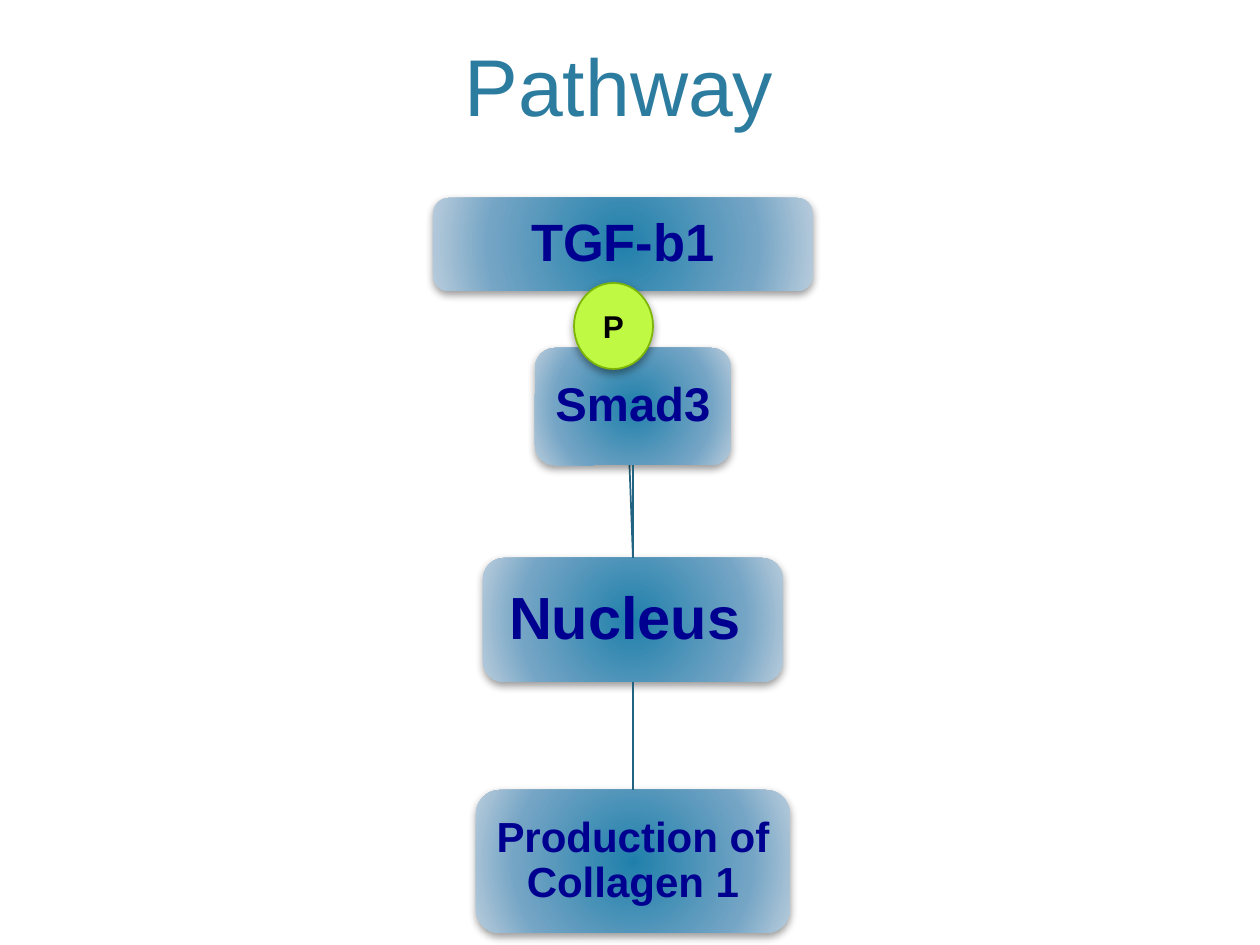
from dataclasses import dataclass

from lxml.etree import SubElement
from pptx import Presentation
from pptx.dml.color import RGBColor
from pptx.enum.shapes import MSO_CONNECTOR as Line, MSO_SHAPE as Shape
from pptx.enum.text import MSO_ANCHOR as Anchor, PP_ALIGN as Align
from pptx.oxml import parse_xml
from pptx.oxml.ns import nsdecls, qn
from pptx.util import Emu, Pt

PX = 914400 / 126
BOTTOM, TOP = 2, 0


@dataclass(frozen=True)
class Theme:
    font: str = "Arial"
    title: str = "2C7C9F"
    step_text: str = "000090"
    step_stops: tuple = ((0, "2080AB"), (69, "75A5C5"), (100, "B8CCDC"))
    link: str = "23637F"
    badge: str = "BFF944"
    badge_edge: str = "7EB606"
    badge_text: str = "000000"
    shadow: str = "000000"
    title_size: int = 46
    badge_size: int = 18


THEME = Theme()


def px(length):
    return Emu(round(length * PX))


def rgb(code):
    return RGBColor.from_string(code)


def write(frame, words, size, color, bold=True, anchor=Anchor.MIDDLE):
    frame.word_wrap = True
    frame.vertical_anchor = anchor
    paragraph = frame.paragraphs[0]
    paragraph.alignment = Align.CENTER
    run = paragraph.add_run()
    run.text = words
    font = run.font
    font.name, font.size, font.bold = THEME.font, Pt(size), bold
    font.color.rgb = rgb(color)
    return paragraph


def drop_shadow(shape):
    shape.shadow.inherit = False
    effects = shape._element.spPr.find(qn("a:effectLst"))
    outer = SubElement(effects, qn("a:outerShdw"), blurRad=str(Pt(5)),
                       dist=str(Pt(2)), dir="5400000", rotWithShape="0")
    black = SubElement(outer, qn("a:srgbClr"), val=THEME.shadow)
    SubElement(black, qn("a:alpha"), val="40000")


def radial_fill(shape):
    stops = "".join(
        f'<a:gs pos="{pos * 1000}"><a:srgbClr val="{color}"/></a:gs>'
        for pos, color in THEME.step_stops)
    gradient = parse_xml(
        f'<a:gradFill {nsdecls("a")} rotWithShape="1"><a:gsLst>{stops}</a:gsLst>'
        '<a:path path="circle"><a:fillToRect l="100000" t="100000" '
        'r="100000" b="100000"/></a:path></a:gradFill>')
    shape._element.spPr.find(qn("a:prstGeom")).addnext(gradient)


def add_step(slide, center, top, width, height, words, size, inset):
    step = slide.shapes.add_shape(Shape.ROUNDED_RECTANGLE, px(center - width / 2),
                                  px(top), px(width), px(height))
    radial_fill(step)
    step.line.fill.background()
    drop_shadow(step)
    frame = step.text_frame
    frame.margin_left = frame.margin_right = px(inset)
    frame.margin_top = frame.margin_bottom = px(inset)
    write(frame, words, size, THEME.step_text).line_spacing = 0.9
    return step


def add_link(slide, upper, lower):
    link = slide.shapes.add_connector(Line.STRAIGHT, 0, 0, 0, 0)
    link.begin_connect(upper, BOTTOM)
    link.end_connect(lower, TOP)
    link.line.color.rgb = rgb(THEME.link)
    link.line.width = Pt(1)
    SubElement(link._element.spPr, qn("a:effectLst"))


def add_badge(slide, left, top, width, height, words):
    badge = slide.shapes.add_shape(Shape.OVAL, px(left), px(top), px(width), px(height))
    badge.fill.solid()
    badge.fill.fore_color.rgb = rgb(THEME.badge)
    badge.line.color.rgb = rgb(THEME.badge_edge)
    badge.line.width = Pt(1)
    drop_shadow(badge)
    write(badge.text_frame, words, THEME.badge_size, THEME.badge_text)


def add_title(slide, left, top, width, height):
    title = slide.shapes.title
    title.left, title.top, title.width, title.height = map(px, (left, top, width, height))
    write(title.text_frame, "Pathway ", THEME.title_size, THEME.title,
          bold=False, anchor=Anchor.BOTTOM)


def add_pathway(slide, left, top, width):
    middle = left + width / 2
    axis = middle + 10  # the lower steps sit right of the first one

    # Steps and links, back to front: the long link passes behind Smad3
    nucleus = add_step(slide, axis, top + 360, 300, 124, "Nucleus ", 34, 11)
    growth_factor = add_step(slide, middle, top, width, 93, "TGF-b1", 30, 10)
    add_link(slide, growth_factor, nucleus)
    smad3 = add_step(slide, axis, top + 150, 196, 117, "Smad3", 27, 9)
    add_link(slide, smad3, nucleus)
    collagen = add_step(slide, axis, top + 592, 314, 143,
                        "Production of Collagen 1", 24, 9)
    add_link(slide, nucleus, collagen)

    # Phosphate between the first two steps
    add_badge(slide, left + 141, top + 85, 79, 86, "P")


def main():
    deck = Presentation()
    deck.slide_width, deck.slide_height = px(1260), px(945)
    slide = deck.slides.add_slide(deck.slide_layouts[5])
    slide.background.fill.solid()
    slide.background.fill.fore_color.rgb = rgb("FFFFFF")
    add_title(slide, 76, -45, 1108, 184)
    add_pathway(slide, 433, 198, 380)
    deck.save("out.pptx")


if __name__ == "__main__":
    main()
